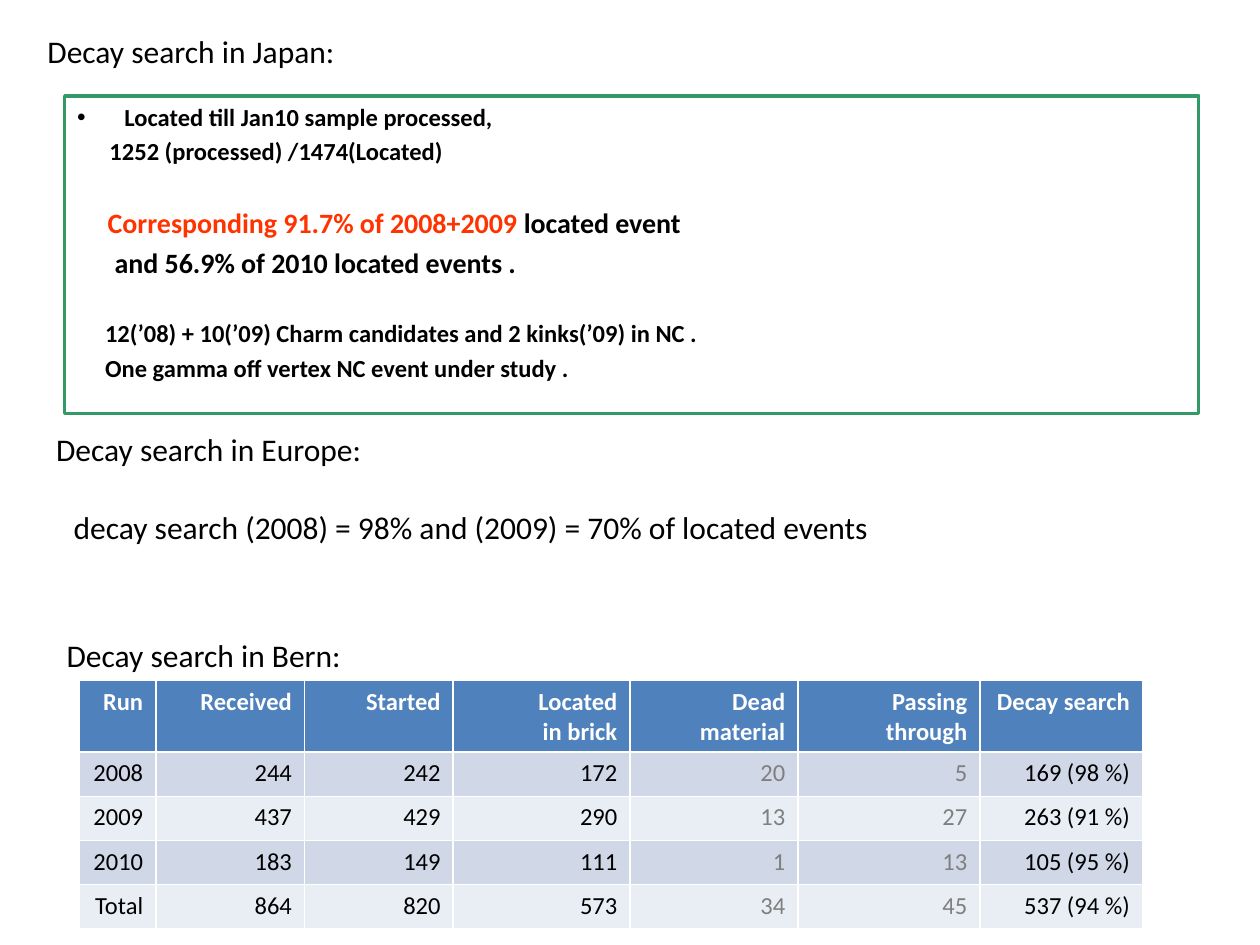
from lxml import etree
from pptx import Presentation
from pptx.dml.color import RGBColor
from pptx.enum.shapes import MSO_SHAPE
from pptx.enum.text import MSO_ANCHOR, MSO_AUTO_SIZE, PP_ALIGN
from pptx.oxml.ns import qn
from pptx.util import Pt

RECTANGLE = MSO_SHAPE.RECTANGLE
TOP = MSO_ANCHOR.TOP
FIT_SHAPE = MSO_AUTO_SIZE.SHAPE_TO_FIT_TEXT
LEFT, RIGHT = PP_ALIGN.LEFT, PP_ALIGN.RIGHT

FONT = "Calibri"
BLACK, WHITE, GREY, RED, GREEN = "000000", "FFFFFF", "7F7F7F", "FF3300", "339966"
HEADER_FILL, BAND_FILLS = "4F81BD", ("D0D8E8", "E9EDF4")
BULLET_INDENT = 27

HEADINGS = [
    ("Decay search in Japan:", 20, 15, 181),
    ("Decay search in Europe:", 25, 242, 191),
    ("decay search (2008) = 98% and (2009) = 70% of located events", 35, 287, 475),
    ("Decay search in Bern:", 31, 360, 174),
]

JAPAN_LINES = [
    (14, BULLET_INDENT, 2.8, [("Located till Jan10 sample processed,", BLACK)]),
    (14, 18.5, 2.8, [("1252 (processed) /1474(Located)", BLACK)]),
    (16, 17.5, 23, [("Corresponding 91.7% of 2008+2009 ", RED), ("located event", BLACK)]),
    (16, 21.5, 3.2, [("and 56.9% of 2010 located events .", BLACK)]),
    (14, 16, 22.7, [("12(’08) + 10(’09) Charm candidates and 2 kinks(’09) in NC .", BLACK)]),
    (14, 16, 2.8, [("One gamma off vertex NC event under study .", BLACK)]),
]

COLUMN_WIDTHS = [44, 85, 85, 101, 96, 104, 93]
ROW_HEIGHTS = [40, 25.2, 25.2, 25.2, 25.2]
GREY_COLUMNS = (4, 5)
BERN_ROWS = [
    ["Run", "Received", "Started", "Located\nin brick", "Dead material",
     "Passing through", "Decay search"],
    ["2008", "244", "242", "172", "20", "5", "169 (98 %)"],
    ["2009", "437", "429", "290", "13", "27", "263 (91 %)"],
    ["2010", "183", "149", "111", "1", "13", "105 (95 %)"],
    ["Total", "864", "820", "573", "34", "45", "537 (94 %)"],
]


def rgb(value):
    """Turn a hex string into a colour."""
    return RGBColor.from_string(value)


def style_font(font, size, color=BLACK, bold=False):
    """Set face, size, colour and weight of a font."""
    font.name = FONT
    font.size = Pt(size)
    font.color.rgb = rgb(color)
    font.bold = bold


def set_bullet(para, indent):
    """Give a paragraph a hanging round bullet."""
    properties = para._p.get_or_add_pPr()
    properties.set("indent", str(-Pt(indent)))
    etree.SubElement(properties, qn("a:buFont")).set("typeface", "Arial")
    etree.SubElement(properties, qn("a:buChar")).set("char", "•")


def add_heading(page, text, left, top, width):
    """Add a one-line text box."""
    box = page.shapes.add_textbox(Pt(left), Pt(top), Pt(width), Pt(29))
    frame = box.text_frame
    frame.word_wrap = False
    frame.auto_size = FIT_SHAPE
    frame.text = text
    style_font(frame.paragraphs[0].font, 18)


def add_japan_box(page):
    """Add the outlined box with the results from Japan."""
    box = page.shapes.add_shape(RECTANGLE, Pt(37), Pt(54.7), Pt(648), Pt(181.5))
    box.shadow.inherit = False
    box.fill.background()
    box.line.color.rgb = rgb(GREEN)
    box.line.width = Pt(2)
    frame = box.text_frame
    frame.word_wrap = True
    frame.vertical_anchor = TOP
    for index, (size, indent, space, spans) in enumerate(JAPAN_LINES):
        para = frame.add_paragraph() if index else frame.paragraphs[0]
        para.alignment = LEFT
        para.space_before = Pt(space)
        para._p.get_or_add_pPr().set("marL", str(Pt(indent)))
        if index == 0:
            set_bullet(para, indent)
        for text, color in spans:
            span = para.add_run()
            span.text = text
            style_font(span.font, size, color, True)


def add_bern_table(page):
    """Add the table of events from Bern."""
    table = page.shapes.add_table(
        len(BERN_ROWS), len(COLUMN_WIDTHS), Pt(45), Pt(389),
        Pt(sum(COLUMN_WIDTHS)), Pt(sum(ROW_HEIGHTS))).table
    for column, width in zip(table.columns, COLUMN_WIDTHS):
        column.width = Pt(width)
    for row_index, values in enumerate(BERN_ROWS):
        table.rows[row_index].height = Pt(ROW_HEIGHTS[row_index])
        header = row_index == 0
        fill = HEADER_FILL if header else BAND_FILLS[(row_index - 1) % 2]
        for column_index, text in enumerate(values):
            body_color = GREY if column_index in GREY_COLUMNS else BLACK
            cell = table.cell(row_index, column_index)
            cell.fill.solid()
            cell.fill.fore_color.rgb = rgb(fill)
            cell.text = text
            for para in cell.text_frame.paragraphs:
                para.alignment = RIGHT
                style_font(para.font, 14, WHITE if header else body_color, header)


def main():
    """Build and save the slide."""
    deck = Presentation()
    deck.slide_width, deck.slide_height = Pt(720), Pt(540)
    page = deck.slides.add_slide(deck.slide_layouts[6])
    add_japan_box(page)
    for heading in HEADINGS:
        add_heading(page, *heading)
    add_bern_table(page)
    deck.save("out.pptx")


if __name__ == "__main__":
    main()
